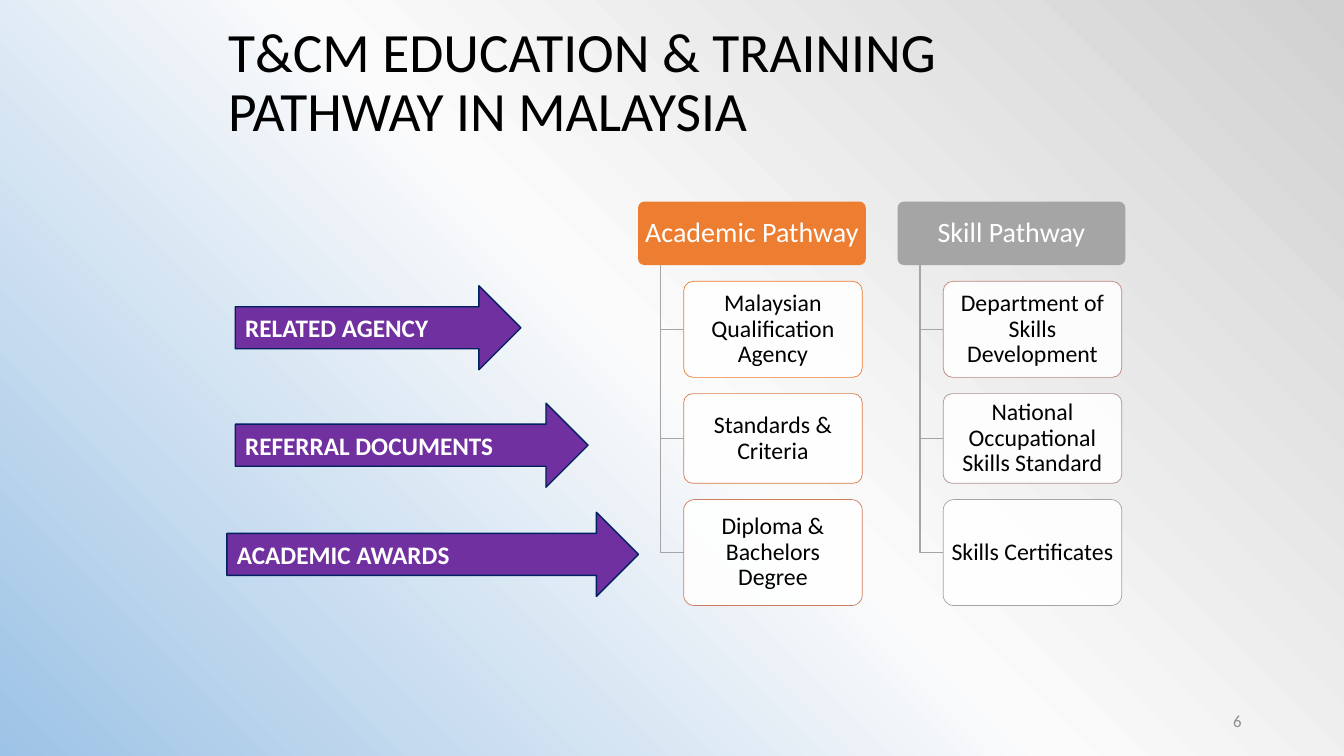
from copy import deepcopy
from pptx import Presentation
from pptx.dml.color import RGBColor
from pptx.enum.shapes import MSO_SHAPE
from pptx.enum.text import MSO_ANCHOR, PP_ALIGN
from pptx.oxml.ns import qn
from pptx.util import Cm, Pt
from lxml import etree

ROUND, ARROW = MSO_SHAPE.ROUNDED_RECTANGLE, MSO_SHAPE.RIGHT_ARROW
LEFT, MID, RIGHT = PP_ALIGN.LEFT, PP_ALIGN.CENTER, PP_ALIGN.RIGHT
COLORS = {
    "blue": "9DC3E6", "pale": "FBFBFB", "silver": "D1D1D1",
    "orange": "ED7D31", "rust": "DC7A4B", "clay": "CC7D64",
    "rose": "BD867B", "taupe": "B09391", "gray": "A5A5A5",
    "purple": "7030A0", "navy": "002060",
    "white": "FFFFFF", "black": "000000", "number": "8C8C8C",
}


def rgb(name):
    return RGBColor.from_string(COLORS[name])


def write(shape, text, size, color, align=LEFT, bold=False, inset=None, space=1.0):
    frame = shape.text_frame
    frame.word_wrap = True
    frame.vertical_anchor = MSO_ANCHOR.MIDDLE
    if inset is not None:
        frame.margin_left = frame.margin_right = Cm(inset)
        frame.margin_top = frame.margin_bottom = Cm(0.05)
    para = frame.paragraphs[0]
    para.alignment = align
    para.line_spacing = space
    run = para.add_run()
    run.text = text
    run.font.name = "Calibri"
    run.font.size = Pt(size)
    run.font.bold = bold
    run.font.color.rgb = rgb(color)


deck = Presentation()
deck.slide_width, deck.slide_height = Cm(33.87), Cm(19.05)
slide = deck.slides.add_slide(deck.slide_layouts[6])
shapes = slide.shapes

# Background: three-stop gradient from bottom left to top right
fill = slide.background.fill
fill.gradient()
fill.gradient_angle = 45
stops = slide.element.find(".//" + qn("a:gsLst"))
stops.append(deepcopy(stops[-1]))
for stop, name, place in zip(fill.gradient_stops, ("blue", "pale", "silver"), (0, 0.5, 1)):
    stop.color.rgb = rgb(name)
    stop.position = place

# Pathway columns: header, then boxes hung from a trunk
HEAD_TOP, HEAD_H, GAP = 5.08, 1.6, 0.41
HEIGHTS = (2.42, 2.26, 2.67)
paths = [
    ("Academic Pathway", "orange", [
        ("Malaysian Qualification Agency", "orange"),
        ("Standards & Criteria", "rust"),
        ("Diploma & Bachelors Degree", "clay")]),
    ("Skill Pathway", "gray", [
        ("Department of Skills Development", "rose"),
        ("National Occupational Skills Standard", "taupe"),
        ("Skills Certificates", "gray")]),
]
for col, (title, tint, items) in enumerate(paths):
    left = 16.08 + col * 6.54
    head = shapes.add_shape(ROUND, Cm(left), Cm(HEAD_TOP), Cm(5.74), Cm(HEAD_H))
    head.adjustments[0] = 0.1
    head.shadow.inherit = False
    head.fill.solid()
    head.fill.fore_color.rgb = rgb(tint)
    head.line.fill.background()
    write(head, title, 20, "white", MID, inset=0.08, space=0.9)

    trunk, edge, base = left + 0.57, left + 1.15, HEAD_TOP + HEAD_H
    top = base + GAP
    for (text, line), height in zip(items, HEIGHTS):
        mid = top + height / 2
        pen = shapes.build_freeform(Cm(trunk), Cm(base))
        pen.add_line_segments([(Cm(trunk), Cm(mid)), (Cm(edge), Cm(mid))], close=False)
        elbow = pen.convert_to_shape()
        elbow.shadow.inherit = False
        elbow.fill.background()
        elbow.line.color.rgb = rgb("gray")
        elbow.line.width = Pt(1)

        box = shapes.add_shape(ROUND, Cm(edge), Cm(top), Cm(4.5), Cm(height))
        box.adjustments[0] = 0.1
        box.shadow.inherit = False
        box.fill.solid()
        box.fill.fore_color.rgb = rgb("white")
        tone = box.fill._xPr.find(".//" + qn("a:srgbClr"))
        etree.SubElement(tone, qn("a:alpha"), val="90000")
        box.line.color.rgb = rgb(line)
        box.line.width = Pt(0.5)
        write(box, text, 17, "black", MID, inset=0.1, space=0.9)
        top += height + GAP

# Row label arrows
for text, left, top, width in (
    ("RELATED AGENCY", 5.93, 7.2, 7.2),
    ("REFERRAL DOCUMENTS", 5.93, 10.16, 8.89),
    ("ACADEMIC AWARDS", 5.72, 12.91, 10.37),
):
    arrow = shapes.add_shape(ARROW, Cm(left), Cm(top), Cm(width), Cm(2.12))
    arrow.shadow.inherit = False
    arrow.fill.solid()
    arrow.fill.fore_color.rgb = rgb("purple")
    arrow.line.color.rgb = rgb("navy")
    arrow.line.width = Pt(1)
    write(arrow, text, 18, "white", bold=True)

# Title and page number
title = shapes.add_textbox(Cm(5.5), Cm(0.85), Cm(22.86), Cm(2.54))
write(title, "T&CM EDUCATION & TRAINING PATHWAY IN MALAYSIA", 39.6, "black", space=0.9)
page = shapes.add_textbox(Cm(23.92), Cm(17.66), Cm(7.62), Cm(1.01))
write(page, "6", 12, "number", RIGHT)

deck.save("out.pptx")
